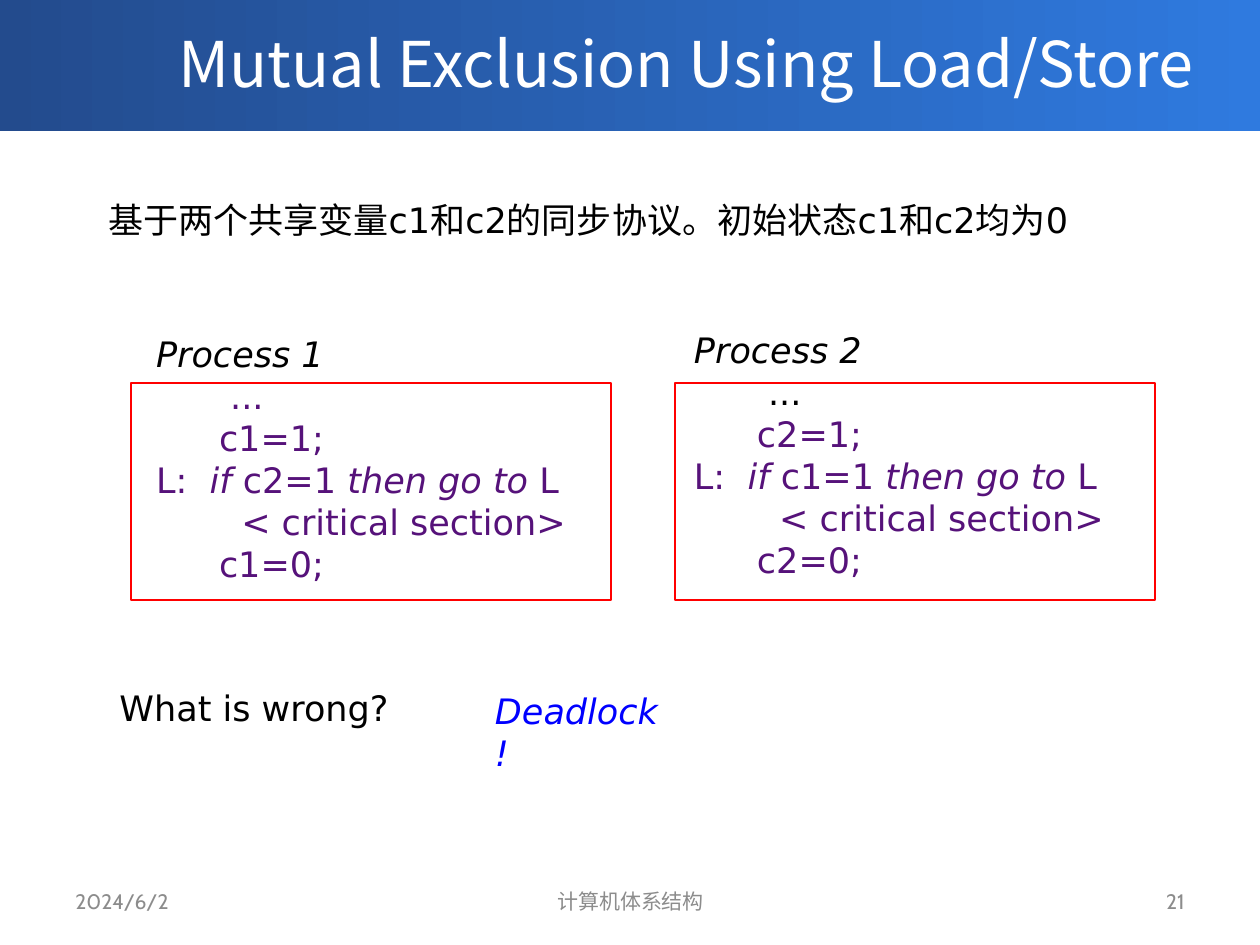
"""Build the slide on mutual exclusion with plain loads and stores."""
from pptx import Presentation
from pptx.dml.color import RGBColor
from pptx.enum.shapes import MSO_SHAPE
from pptx.enum.text import MSO_ANCHOR, PP_ALIGN
from pptx.util import Inches, Pt

RECTANGLE = MSO_SHAPE.RECTANGLE
MIDDLE, TOP = MSO_ANCHOR.MIDDLE, MSO_ANCHOR.TOP
LEFT, CENTER, RIGHT = PP_ALIGN.LEFT, PP_ALIGN.CENTER, PP_ALIGN.RIGHT

BODY_FONT, TITLE_FONT, FOOTER_FONT = "DejaVu Sans", "Noto Sans CJK SC", "Cabin"
BLACK, WHITE, GREY = "000000", "FFFFFF", "8C8C8C"
PURPLE, BLUE, RED = "56127A", "0000FF", "FF0000"
BANNER_COLORS = ("234B8D", "2F7ADF")

TITLE = "Mutual Exclusion Using Load/Store "
STATEMENTS = [
    ("基于两个共享变量c1和c2的同步协议。初始状态c1和c2均为0", (0.76, 1.53, 7.94, 0.43), BLACK, False),
    ("What is wrong?", (0.85, 5.4, 2.36, 0.43), BLACK, False),
    ("Deadlock!", (3.83, 5.42, 1.58, 0.43), BLUE, True),
]
PROCESSES = [
    {"number": 1, "other": 2, "dots": PURPLE, "code": (1.14, 2.59, 3.46, 2.1), "frame_left": 1.04},
    {"number": 2, "other": 1, "dots": BLACK, "code": (5.41, 2.56, 3.46, 2.1), "frame_left": 5.36},
]
FOOTERS = [
    ("2024/6/2", 0.5, 2.33, LEFT),
    ("计算机体系结构", 3.42, 3.17, CENTER),
    ("21", 7.17, 2.33, RIGHT),
]


def rgb(value):
    """Turn a hex string into a colour."""
    return RGBColor.from_string(value)


def code_lines(process):
    """List each line as its indent level and its (text, colour, italic) runs."""
    own, other = f"c{process['number']}", f"c{process['other']}"
    return [
        (0, [(f"Process {process['number']}", BLACK, True)]),
        (1, [(" ...", process["dots"], False)]),
        (1, [(f"{own}=1;", PURPLE, False)]),
        (0, [("L:  ", PURPLE, False), ("if", PURPLE, True), (f" {other}=1 ", PURPLE, False),
             ("then go to ", PURPLE, True), ("L", PURPLE, False)]),
        (1, [("  < critical section>", PURPLE, False)]),
        (1, [(f"{own}=0;", PURPLE, False)]),
    ]


def add_text(slide, place, lines, size=20, font=BODY_FONT, align=LEFT, anchor=TOP):
    """Add a wrapped text box holding the given lines of runs."""
    frame = slide.shapes.add_textbox(*map(Inches, place)).text_frame
    frame.word_wrap = True
    frame.vertical_anchor = anchor
    for index, (level, runs) in enumerate(lines):
        paragraph = frame.add_paragraph() if index else frame.paragraphs[0]
        paragraph.level = level
        paragraph.alignment = align
        for text, color, italic in runs:
            run = paragraph.add_run()
            run.text = text
            run.font.name = font
            run.font.size = Pt(size)
            run.font.italic = italic
            run.font.color.rgb = rgb(color)


def add_rectangle(slide, *place):
    """Add a rectangle without shadow."""
    rectangle = slide.shapes.add_shape(RECTANGLE, *map(Inches, place))
    rectangle.shadow.inherit = False
    return rectangle


def main():
    """Lay out the banner, the statements, both processes and the footer."""
    prs = Presentation()
    prs.slide_width, prs.slide_height = Inches(10), Inches(7.5)
    slide = prs.slides.add_slide(prs.slide_layouts[6])

    banner = add_rectangle(slide, 0, -0.03, 10, 1.07)
    banner.line.fill.background()
    banner.fill.gradient()
    banner.fill.gradient_angle = 0
    for position, (stop, color) in enumerate(zip(banner.fill.gradient_stops, BANNER_COLORS)):
        stop.position = position
        stop.color.rgb = rgb(color)
    add_text(slide, (1, 0, 9, 0.99), [(0, [(TITLE, WHITE, False)])], 36, TITLE_FONT, CENTER, MIDDLE)

    for text, place, color, italic in STATEMENTS:
        add_text(slide, place, [(0, [(text, color, italic)])])

    for process in PROCESSES:
        add_text(slide, process["code"], code_lines(process))
        frame = add_rectangle(slide, process["frame_left"], 3.04, 3.81, 1.72)
        frame.fill.background()
        frame.line.color.rgb = rgb(RED)
        frame.line.width = Pt(1)

    for text, left, width, align in FOOTERS:
        add_text(slide, (left, 6.95, width, 0.4), [(0, [(text, GREY, False)])],
                 12, FOOTER_FONT, align, MIDDLE)

    prs.save("out.pptx")


if __name__ == "__main__":
    main()
